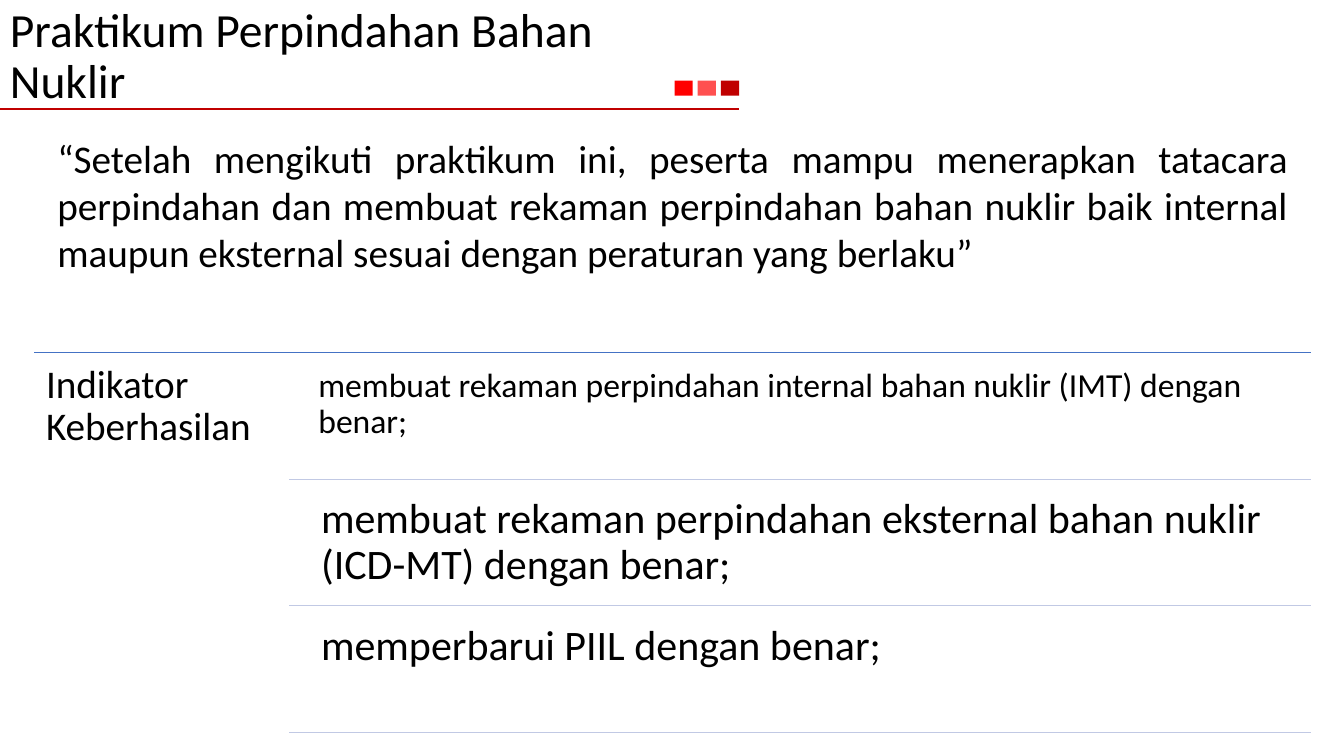
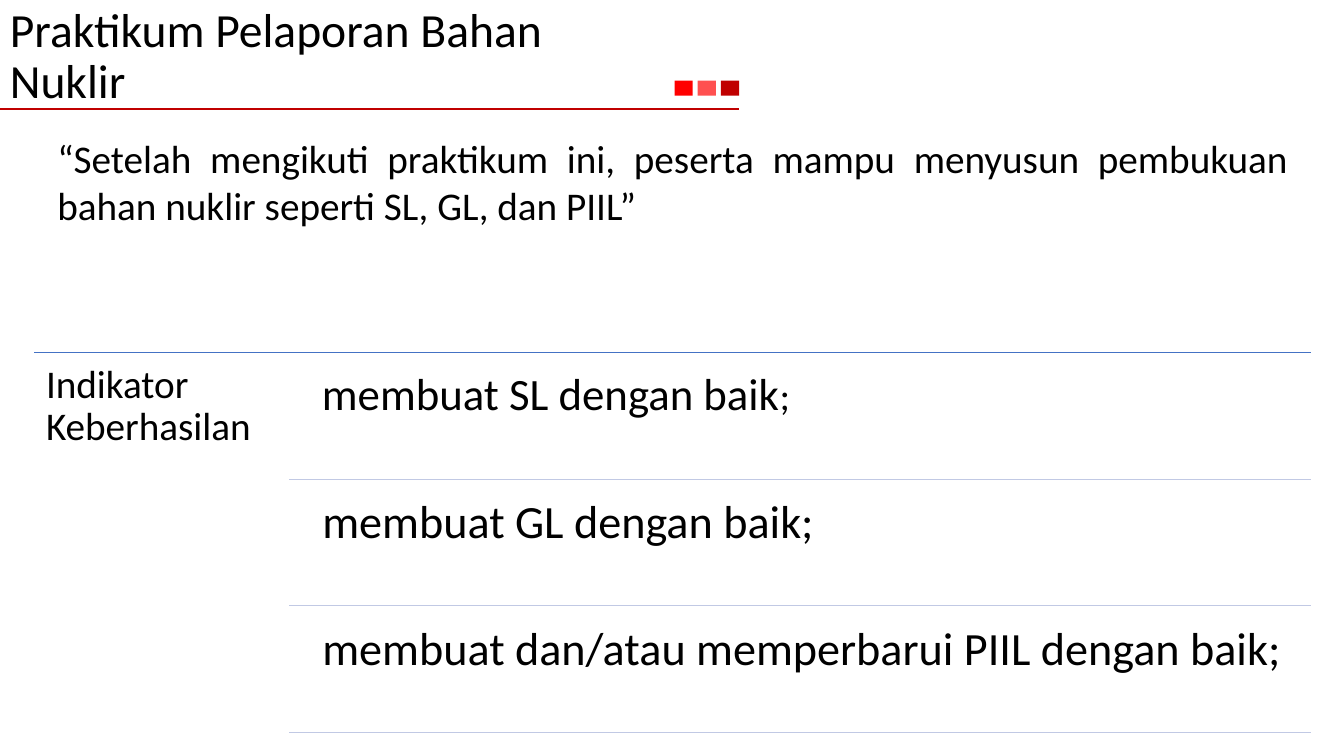
import pptx
import pptx.dml.color
import pptx.enum.shapes
import pptx.enum.text
import pptx.oxml
import pptx.util

Inches = pptx.util.Inches
RGBColor = pptx.dml.color.RGBColor
PP_ALIGN = pptx.enum.text.PP_ALIGN
MSO_ANCHOR = pptx.enum.text.MSO_ANCHOR

BLACK = RGBColor(0x00, 0x00, 0x00)
RED = RGBColor(0xFF, 0x00, 0x00)
LIGHT_RED = RGBColor(0xFF, 0x50, 0x50)
DARK_RED = RGBColor(0xC0, 0x00, 0x00)
BLUE = RGBColor(0x44, 0x72, 0xC4)
PALE_BLUE = RGBColor(0xC1, 0xC9, 0xE4)

FONT = "Calibri"
LIST_LEFT, LIST_RIGHT, LIST_TOP = 0.34, 13, 3.5
LABEL_WIDTH = 2.53
ITEM_LEFT, ITEM_HEIGHT, ITEM_GAP = 3.06, 1.2, 0.055

# Each indicator is a list of (text, size) runs.
PRACTICALS = [
    (
        "Praktikum Perpindahan Bahan Nuklir",
        "“Setelah mengikuti praktikum ini, peserta mampu menerapkan tatacara "
        "perpindahan dan membuat rekaman perpindahan bahan nuklir baik internal "
        "maupun eksternal sesuai dengan peraturan yang berlaku”",
        [
            [("membuat rekaman perpindahan internal bahan nuklir (IMT) dengan benar;", 24)],
            [("membuat rekaman perpindahan eksternal bahan nuklir (ICD-MT) dengan benar;", 30)],
            [("memperbarui PIIL dengan benar;", 30)],
        ],
    ),
    (
        "Praktikum Pelaporan Bahan Nuklir",
        "“Setelah mengikuti praktikum ini, peserta mampu menyusun pembukuan "
        "bahan nuklir seperti SL, GL, dan PIIL”",
        [
            [("membuat SL dengan baik", 32), (";", 28)],
            [("membuat GL dengan baik;", 33)],
            [("membuat dan/atau memperbarui PIIL dengan baik;", 33)],
        ],
    ),
]


class Deck:
    def __init__(self):
        self.presentation = pptx.Presentation()
        self.presentation.slide_width = Inches(13.33)
        self.presentation.slide_height = Inches(7.5)
        self.slide = None

    def add_slide(self, title):
        """Start a slide with the shared red title band."""
        self.slide = self.presentation.slides.add_slide(self.presentation.slide_layouts[6])
        for index, color in enumerate((RED, LIGHT_RED, DARK_RED)):
            self.square(6.69 + 0.23 * index, 0.8, color)
        self.rule(0, 7.33, 1.08, DARK_RED, 1.75)
        self.text(0, 0, 6.53, 1.14, [(title, 34)], spacing=0.9, anchor=MSO_ANCHOR.MIDDLE)

    def square(self, left, top, color):
        shape = self.slide.shapes.add_shape(
            pptx.enum.shapes.MSO_SHAPE.RECTANGLE,
            Inches(left), Inches(top), Inches(0.18), Inches(0.15))
        shape.shadow.inherit = False
        shape.fill.solid()
        shape.fill.fore_color.rgb = color
        shape.line.fill.background()

    def rule(self, left, right, top, color, width=1):
        """Draw a horizontal line."""
        connector = self.slide.shapes.add_connector(
            pptx.enum.shapes.MSO_CONNECTOR.STRAIGHT,
            Inches(left), Inches(top), Inches(right), Inches(top))
        connector.line.color.rgb = color
        connector.line.width = pptx.util.Pt(width)
        properties = connector.element.spPr
        properties.append(pptx.oxml.parse_xml(
            '<a:effectLst xmlns:a="http://schemas.openxmlformats.org/drawingml/2006/main"/>'))

    def text(self, left, top, width, height, runs, inset=None, spacing=None,
             alignment=PP_ALIGN.LEFT, anchor=MSO_ANCHOR.TOP):
        """Place one paragraph made of (text, size) runs."""
        shape = self.slide.shapes.add_textbox(
            Inches(left), Inches(top), Inches(width), Inches(height))
        frame = shape.text_frame
        frame.word_wrap = True
        frame.vertical_anchor = anchor
        if inset is not None:
            frame.margin_left = frame.margin_right = Inches(inset)
            frame.margin_top = frame.margin_bottom = Inches(inset)
        paragraph = frame.paragraphs[0]
        paragraph.alignment = alignment
        paragraph.line_spacing = spacing
        for content, size in runs:
            run = paragraph.add_run()
            run.text = content
            run.font.name = FONT
            run.font.size = pptx.util.Pt(size)
            run.font.color.rgb = BLACK

    def list_text(self, left, top, width, height, runs):
        """Place list text, whose inset grows with its size."""
        self.text(left, top, width, height, runs, inset=runs[0][1] / 240, spacing=0.9)

    def objective(self, content):
        self.text(0.47, 1.28, 12.4, 2.1, [(content, 28)], alignment=PP_ALIGN.JUSTIFY)

    def indicators(self, items):
        self.rule(LIST_LEFT, LIST_RIGHT, LIST_TOP, BLUE)
        self.list_text(LIST_LEFT, LIST_TOP, LABEL_WIDTH, 3.82, [("Indikator Keberhasilan", 28)])
        bottom = LIST_TOP
        for runs in items:
            top = bottom + ITEM_GAP
            bottom = top + ITEM_HEIGHT
            self.list_text(ITEM_LEFT, top, LIST_RIGHT - ITEM_LEFT, ITEM_HEIGHT, runs)
            self.rule(LIST_LEFT + LABEL_WIDTH, LIST_RIGHT, bottom, PALE_BLUE)


def main():
    deck = Deck()
    for title, objective, indicators in PRACTICALS:
        deck.add_slide(title)
        deck.objective(objective)
        deck.indicators(indicators)
    deck.presentation.save("out.pptx")


if __name__ == "__main__":
    main()
